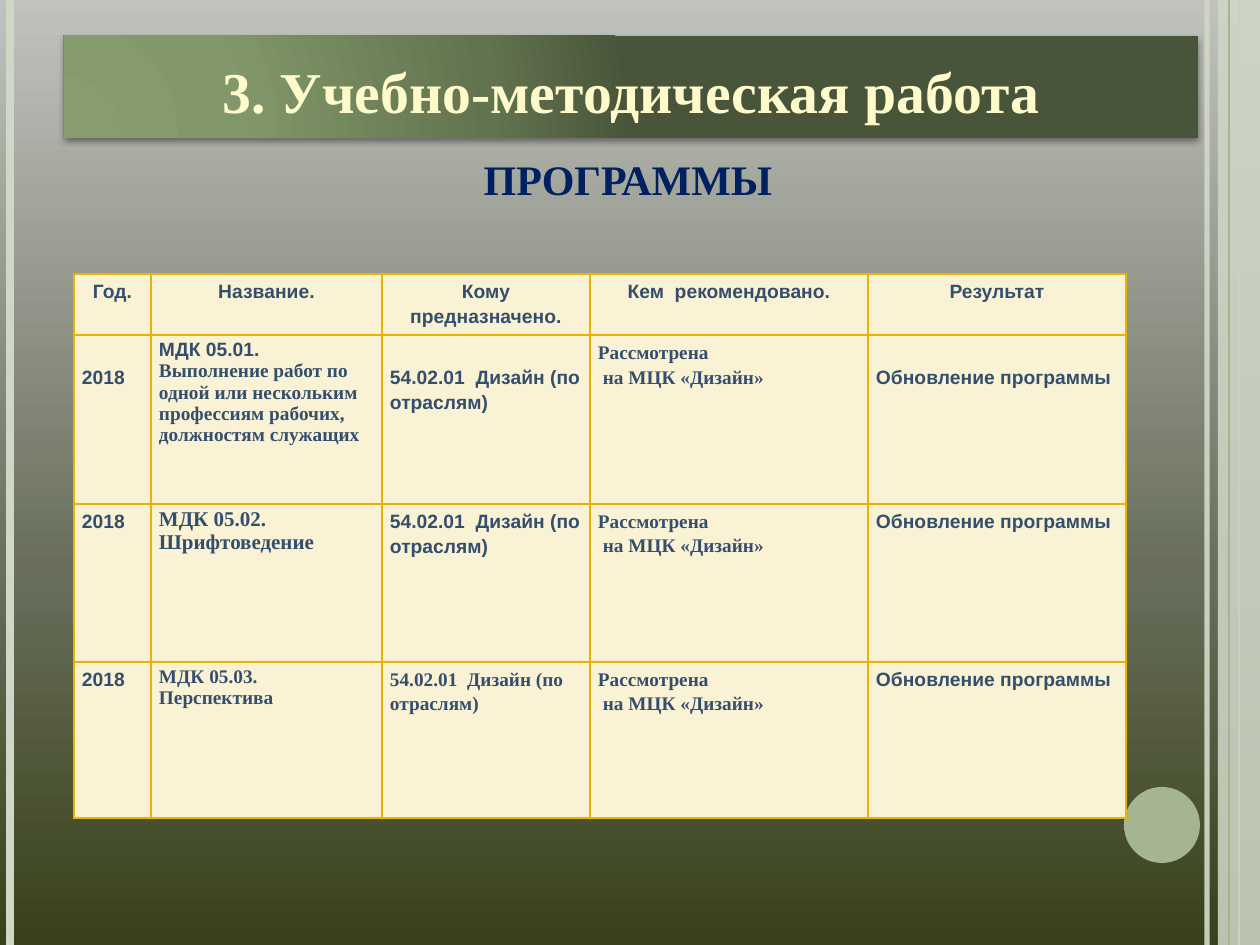
import pptx
import pptx.util
import pptx.dml.color
import pptx.enum.shapes
import pptx.enum.text
import pptx.oxml
import pptx.oxml.ns

RGB = pptx.dml.color.RGBColor
PALE = RGB(0xCF, 0xD7, 0xC7)
SAGE = RGB(0xA5, 0xB5, 0x92)
CREAM = RGB(0xFE, 0xFA, 0xC9)
NAVY = RGB(0x00, 0x20, 0x60)
SLATE = RGB(0x34, 0x4E, 0x6D)
SAND = RGB(0xFA, 0xF2, 0xD4)
GOLD = RGB(0xE9, 0xB4, 0x00)
DUSK = [(0, RGB(0x38, 0x41, 0x1A)), (40, RGB(0x69, 0x6F, 0x5C)),
        (100, RGB(0xC1, 0xC2, 0xBE))]
MOSS = [(0, RGB(0x88, 0x9D, 0x6E)), (30, RGB(0x83, 0x98, 0x6A)),
        (75, RGB(0x62, 0x73, 0x4F)), (100, RGB(0x49, 0x55, 0x3A))]
SANS, SERIF = "Arial", "Times New Roman"
ALIGN = pptx.enum.text.PP_ALIGN
MIDDLE = pptx.enum.text.MSO_ANCHOR.MIDDLE
TOP = pptx.enum.text.MSO_ANCHOR.TOP
FORMS = pptx.enum.shapes.MSO_SHAPE
NS = pptx.oxml.ns.nsdecls("a")
qn = pptx.oxml.ns.qn
Pt = pptx.util.Pt

HEADS = ["Год.", "Название.", "Кому предназначено.",
         "Кем  рекомендовано.", "Результат"]
YEAR, CODE = "2018", "54.02.01  Дизайн (по отраслям)"
JUDGES = ["Рассмотрена", " на МЦК «Дизайн»"]
END = "Обновление программы"
PLANS = [
    ([("МДК 05.01. ", SANS),
      ("Выполнение работ по одной или нескольким профессиям рабочих, "
       "должностям служащих", SERIF)], 11, SANS, 29),
    ([("МДК 05.02. Шрифтоведение", SERIF)], 12, SANS, 4),
    ([("МДК 05.03. Перспектива", SERIF)], 11, SERIF, 4),
]


def px(n):
    return pptx.util.Emu(round(n * 914400 / 126))


def blend(host, stops, shade):
    marks = "".join(f'<a:gs pos="{at * 1000}"><a:srgbClr val="{tint}"/></a:gs>'
                    for at, tint in stops)
    fill = pptx.oxml.parse_xml(
        f'<a:gradFill {NS} rotWithShape="1"><a:gsLst>{marks}</a:gsLst>{shade}</a:gradFill>')
    host.replace(host.find(qn("a:solidFill")), fill)


def fade(host, share):
    for tint in host.iter(qn("a:srgbClr")):
        tint.append(pptx.oxml.parse_xml(f'<a:alpha {NS} val="{share * 1000}"/>'))


def write(para, runs, size, tint, align=ALIGN.LEFT, lead=None):
    para.alignment = align
    if lead:
        para.line_spacing = lead
    font = para.font
    font.size, font.bold = Pt(size), True
    font.color.rgb = tint
    if len(runs) == 1:
        font.name = runs[0][1]
    for text, face in runs:
        run = para.add_run()
        run.text = text
        if len(runs) > 1:
            run.font.name = face


def inset(item, left, top, right, low):
    item.margin_left, item.margin_top = px(left), px(top)
    item.margin_right, item.margin_bottom = px(right), px(low)


def form(slide, kind, box, tint):
    shape = slide.shapes.add_shape(kind, *map(px, box))
    shape.shadow.inherit = False
    shape.fill.solid()
    shape.fill.fore_color.rgb = tint
    shape.line.fill.background()
    return shape


def rule(slide, x, height, tint, width, share=100):
    line = slide.shapes.add_connector(
        pptx.enum.shapes.MSO_CONNECTOR.STRAIGHT, px(x), 0, px(x), px(height))
    line.line.color.rgb = tint
    line.line.width = Pt(width)
    props = line._element.spPr
    if share < 100:
        fade(props, share)
    props.append(pptx.oxml.parse_xml(f'<a:effectLst {NS}/>'))


def frame(slide, box):
    left, top, width, height = box
    slide.background.fill.solid()
    blend(slide._element.find(".//" + qn("p:bgPr")), DUSK,
          '<a:lin ang="16200000" scaled="0"/>')
    right = left + width
    rule(slide, right - 53, height, PALE, 3, 93)
    rule(slide, left + 10, height, PALE, 4.5)
    rule(slide, right - 21, height, SAGE, 1.5)
    band = form(slide, FORMS.RECTANGLE, (right - 42, top, 42, height), PALE)
    fade(band._element.spPr, 87)
    rule(slide, right - 31, height, SAGE, 0.75)
    form(slide, FORMS.OVAL, (right - 136, top + 787, 76, 76), SAGE)


def banner(slide, box):
    shape = form(slide, FORMS.RECTANGLE, box, MOSS[0][1])
    props = shape._element.spPr
    blend(props, MOSS, '<a:path path="circle"><a:fillToRect l="5000" t="100000" '
          'r="120000" b="10000"/></a:path>')
    props.find(qn("a:effectLst")).append(pptx.oxml.parse_xml(
        f'<a:outerShdw {NS} blurRad="50800" dist="20320" dir="5400000" '
        'rotWithShape="0"><a:srgbClr val="000000"><a:alpha val="42000"/>'
        '</a:srgbClr></a:outerShdw>'))
    text = shape.text_frame
    text.word_wrap, text.vertical_anchor = True, MIDDLE
    inset(text, 13, 6, 13, 0)
    write(text.paragraphs[0], [("3. Учебно-методическая работа", SERIF)],
          33, CREAM, ALIGN.CENTER)


def title(slide, box):
    text = slide.shapes.add_textbox(*map(px, box)).text_frame
    text.word_wrap, text.vertical_anchor = True, TOP
    inset(text, 13, 9, 13, 0)
    write(text.paragraphs[0], [("ПРОГРАММЫ", SERIF)], 24, NAVY, ALIGN.CENTER)


def put(cell, paras, size=11, align=ALIGN.LEFT, lead=1.15, top=4):
    props = cell._tc.get_or_add_tcPr()
    for side in "LRTB":
        props.append(pptx.oxml.parse_xml(
            f'<a:ln{side} {NS} w="12700"><a:solidFill><a:srgbClr val="{GOLD}"/>'
            f'</a:solidFill></a:ln{side}>'))
    cell.fill.solid()
    cell.fill.fore_color.rgb = SAND
    inset(cell, 8, top, 8, 4)
    text = cell.text_frame
    for n, runs in enumerate(paras):
        para = text.add_paragraph() if n else text.paragraphs[0]
        write(para, runs, size, SLATE, align, lead)


def grid(slide, box):
    cols, rows = [77, 231, 208, 278, 258], [61, 169, 158, 156]
    table = slide.shapes.add_table(len(rows), len(cols), *map(px, box)).table
    table.first_row = table.horz_banding = False
    for col, width in zip(table.columns, cols):
        col.width = px(width)
    for row, height in zip(table.rows, rows):
        row.height = px(height)
    for n, head in enumerate(HEADS):
        put(table.cell(0, n), [[(head, SANS)]], align=ALIGN.CENTER)
    for n, (name, size, face, top) in enumerate(PLANS, 1):
        put(table.cell(n, 0), [[(YEAR, SANS)]], top=top)
        put(table.cell(n, 1), [name], size, lead=None)
        put(table.cell(n, 2), [[(CODE, face)]], top=top)
        put(table.cell(n, 3), [[(line, SERIF)] for line in JUDGES])
        put(table.cell(n, 4), [[(END, SANS)]], top=top)


def main():
    deck = pptx.Presentation()
    deck.slide_width, deck.slide_height = px(1260), px(945)
    slide = deck.slides.add_slide(deck.slide_layouts[6])
    frame(slide, (0, 0, 1260, 945))
    banner(slide, (64, 36, 1134, 102))
    title(slide, (292, 145, 672, 108))
    grid(slide, (74, 274, 1052, 544))
    deck.save("out.pptx")


if __name__ == "__main__":
    main()
